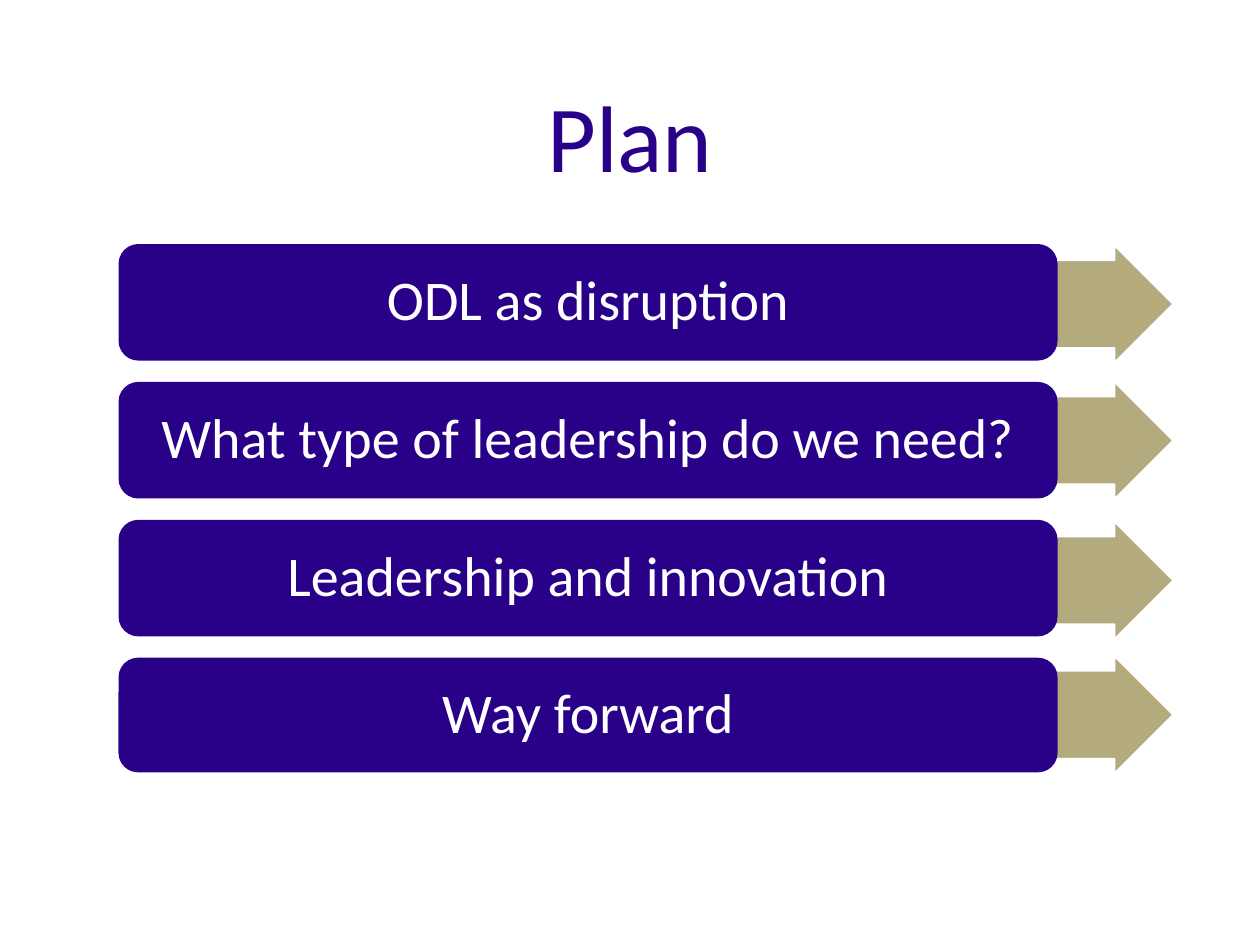
"""Build the Plan slide: four topic bars, each with an arrow behind it."""
from dataclasses import dataclass

from pptx import Presentation
from pptx.dml.color import RGBColor
from pptx.enum.shapes import MSO_SHAPE
from pptx.enum.text import MSO_ANCHOR, MSO_AUTO_SIZE, PP_ALIGN
from pptx.util import Cm, Pt

ARROW = MSO_SHAPE.RIGHT_ARROW
BAR = MSO_SHAPE.ROUNDED_RECTANGLE
MIDDLE = MSO_ANCHOR.MIDDLE
NO_FIT = MSO_AUTO_SIZE.NONE
CENTER = PP_ALIGN.CENTER

TITLE_ONLY = 5
INDIGO, SAND, WHITE = "290088", "B3AA7E", "FFFFFF"
FIRST_TOP, PITCH = 4.92, 2.78
BAR_FRAME = {"word_wrap": True, "auto_size": NO_FIT, "vertical_anchor": MIDDLE,
             "margin_left": Cm(0.46), "margin_right": Cm(0.46),
             "margin_top": Cm(0.28), "margin_bottom": Cm(0.28)}
TITLE_FRAME = {"word_wrap": True, "auto_size": NO_FIT, "vertical_anchor": MIDDLE}
PARAGRAPH = {"alignment": CENTER, "line_spacing": 0.9}


@dataclass
class Topic:
    text: str
    arrow_top: float
    bar_height: float = 2.35


TOPICS = [
    Topic("ODL as disruption", 4.95),
    Topic("What type of leadership do we need?", 7.7),
    Topic("Leadership and innovation", 10.52),
    Topic("Way forward", 13.23, 2.31),
]


def color(value: str) -> RGBColor:
    return RGBColor.from_string(value)


def apply(target, values: dict) -> None:
    for name, value in values.items():
        setattr(target, name, value)


def write(shape, text: str, size: float, ink: str, frame_format: dict) -> None:
    frame = shape.text_frame
    apply(frame, frame_format)
    para = frame.paragraphs[0]
    apply(para, PARAGRAPH)
    span = para.add_run()
    span.text = text
    apply(span.font, {"name": "Calibri", "size": Pt(size)})
    span.font.color.rgb = color(ink)


def add_filled(page, kind, left: float, top: float, width: float, height: float,
               fill: str, adjustments: list[float]):
    shape = page.shapes.add_shape(kind, Cm(left), Cm(top), Cm(width), Cm(height))
    shape.shadow.inherit = False
    shape.fill.solid()
    shape.fill.fore_color.rgb = color(fill)
    for index, value in enumerate(adjustments):
        shape.adjustments[index] = value
    return shape


def add_topic(page, topic: Topic, top: float) -> None:
    arrow = add_filled(page, ARROW, 19.33, topic.arrow_top, 4.32, 2.36, SAND, [0.75, 0.5])
    arrow.line.color.rgb = color(WHITE)
    arrow.line.width = Pt(1)
    bar = add_filled(page, BAR, 2.39, top, 18.93, topic.bar_height, INDIGO, [0.17])
    bar.line.fill.background()
    write(bar, topic.text, 32, WHITE, BAR_FRAME)


def main() -> None:
    deck = Presentation()
    apply(deck, {"slide_width": Cm(25.4), "slide_height": Cm(19.05)})
    page = deck.slides.add_slide(deck.slide_layouts[TITLE_ONLY])
    title = page.shapes.title
    apply(title, {"left": Cm(1.75), "top": Cm(1.02), "width": Cm(21.9), "height": Cm(3.68)})
    write(title, "Plan", 54, INDIGO, TITLE_FRAME)
    for row, topic in enumerate(TOPICS):
        add_topic(page, topic, FIRST_TOP + row * PITCH)
    deck.save("out.pptx")


if __name__ == "__main__":
    main()
